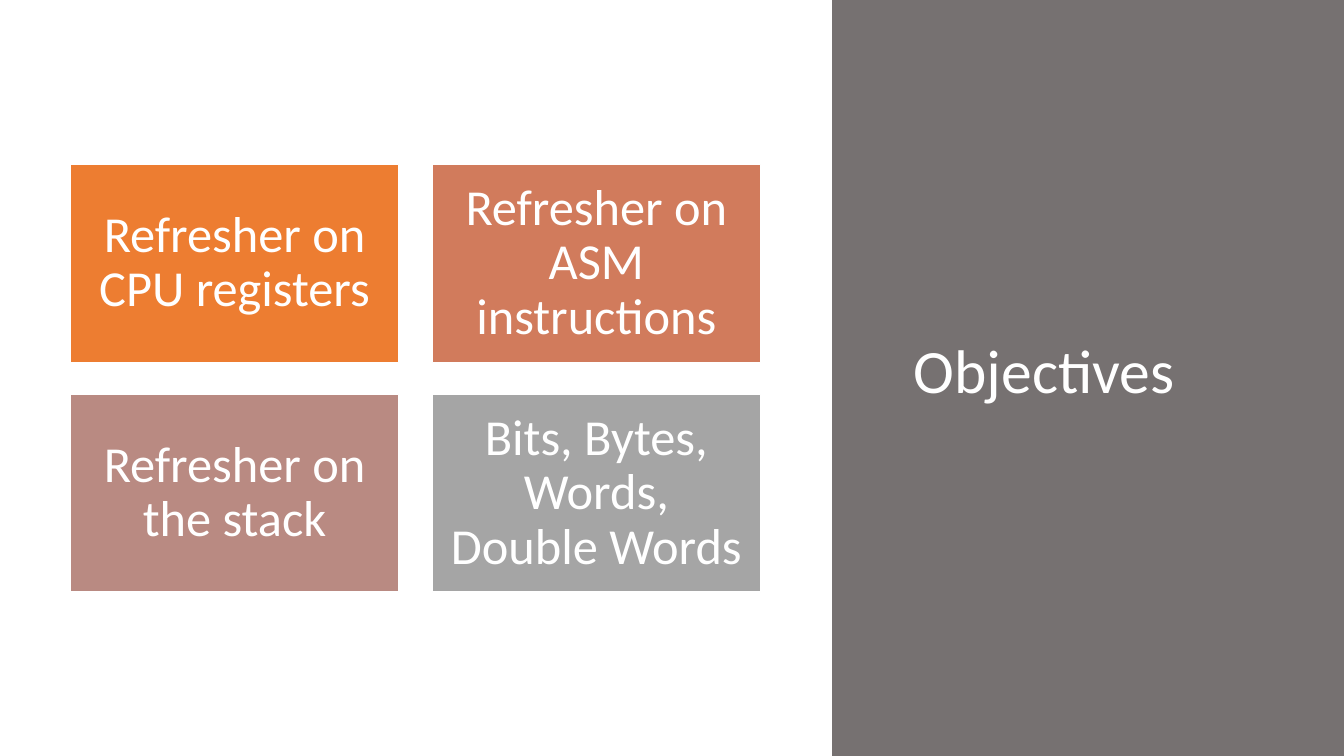
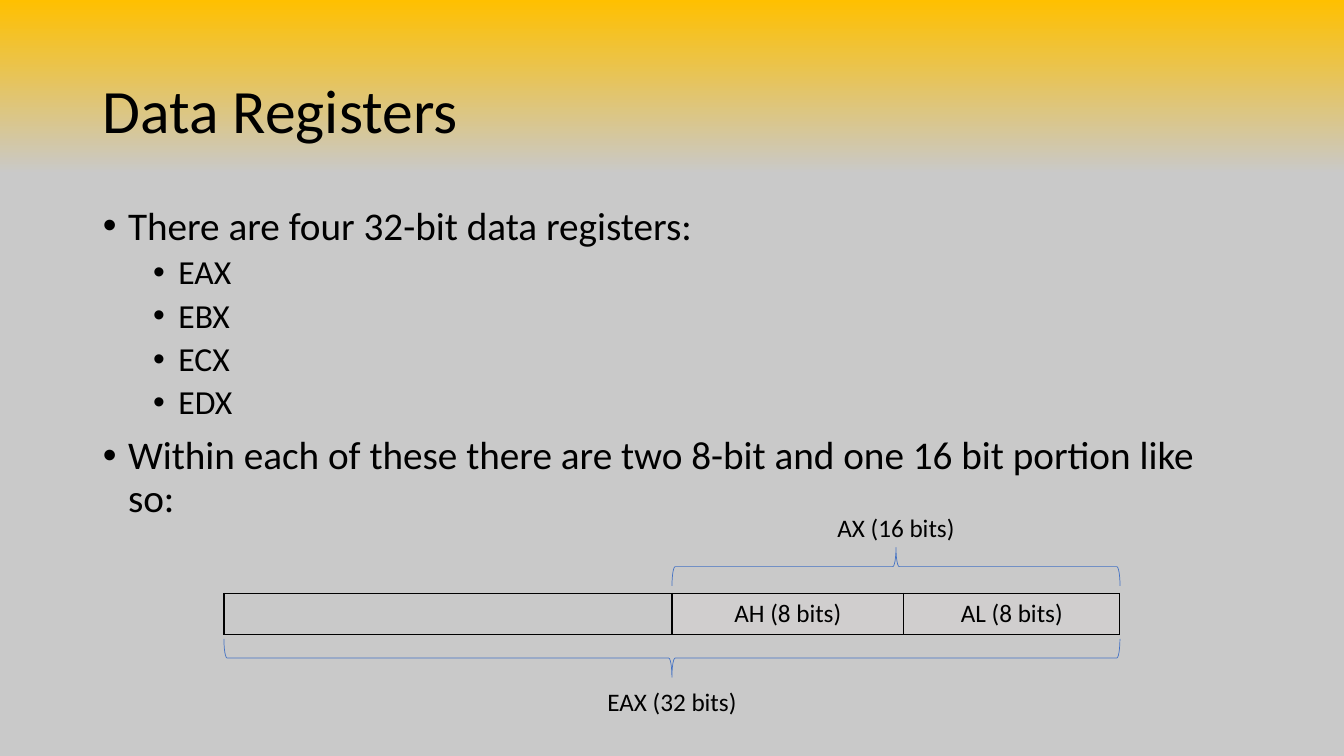
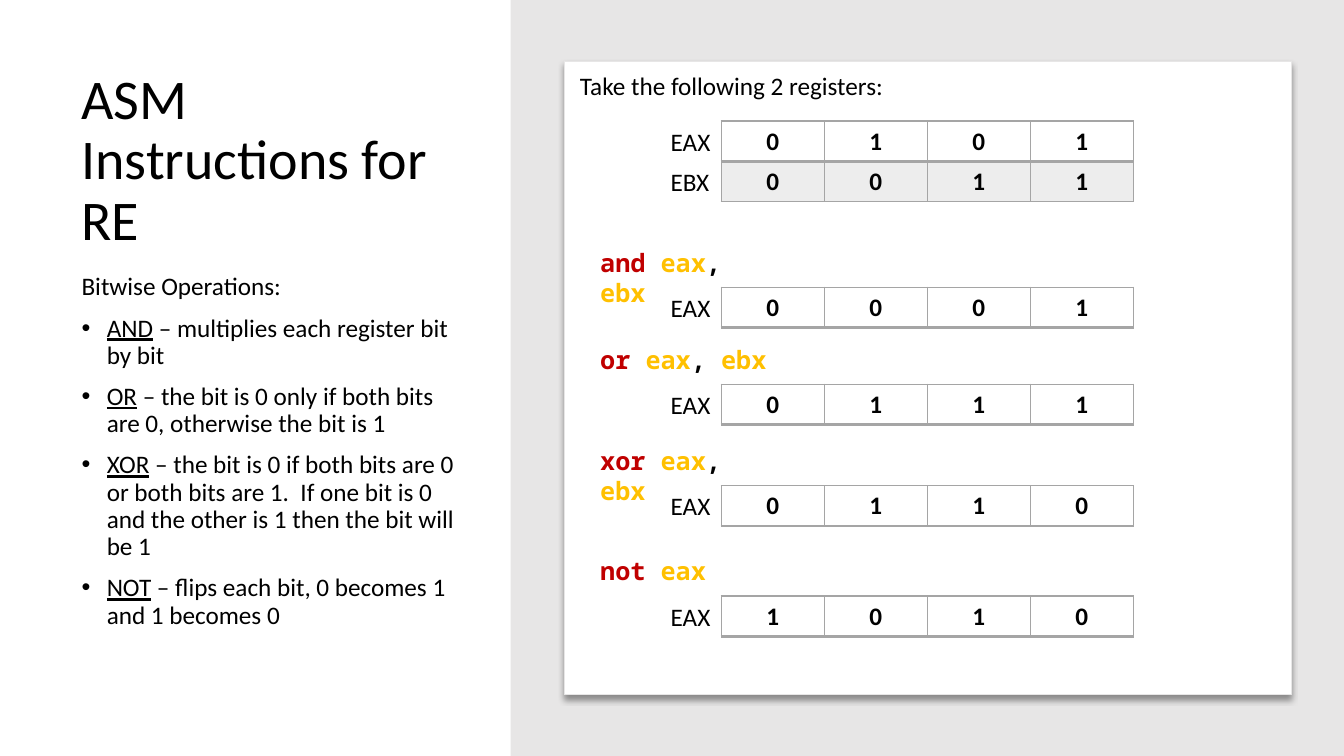
from dataclasses import dataclass
from typing import NamedTuple, Optional, Sequence, Union

import pptx
import pptx.dml.color
import pptx.enum.shapes
import pptx.enum.text
import pptx.oxml
import pptx.oxml.ns
import pptx.util
from lxml import etree

RGBColor = pptx.dml.color.RGBColor
PP_ALIGN = pptx.enum.text.PP_ALIGN
MSO_ANCHOR = pptx.enum.text.MSO_ANCHOR
MSO_SHAPE = pptx.enum.shapes.MSO_SHAPE
qn = pptx.oxml.ns.qn

BLACK = RGBColor(0x00, 0x00, 0x00)
WHITE = RGBColor(0xFF, 0xFF, 0xFF)
TAUPE = RGBColor(0x76, 0x71, 0x71)
ORANGE = RGBColor(0xED, 0x7D, 0x31)
TERRACOTTA = RGBColor(0xD1, 0x7B, 0x5C)
DUSTY_ROSE = RGBColor(0xB9, 0x8A, 0x82)
GRAY = RGBColor(0xA5, 0xA5, 0xA5)
PALE_GRAY = RGBColor(0xED, 0xED, 0xED)
BAND_GRAY = RGBColor(0xE7, 0xE6, 0xE6)
CELL_GRAY = RGBColor(0xD0, 0xCE, 0xCE)
BACK_GRAY = RGBColor(0xC9, 0xC9, 0xC9)
GOLD = RGBColor(0xFF, 0xC0, 0x00)
RED = RGBColor(0xC0, 0x00, 0x00)
BLUE = RGBColor(0x44, 0x72, 0xC4)

BODY_FONT = "Calibri"
CODE_FONT = "Noto Sans Mono"

# The slide is a grid of 12 columns by 12 rows; every Box is given in them.
SLIDE_WIDTH = pptx.util.Emu(12192000)
SLIDE_HEIGHT = pptx.util.Inches(7.5)
COLUMN = SLIDE_WIDTH / 12
ROW = SLIDE_HEIGHT / 12
LINE_ROWS = 0.64


class Box(NamedTuple):
    left: float
    top: float
    width: float
    height: float

    def emu(self) -> tuple[int, int, int, int]:
        return (round(self.left * COLUMN), round(self.top * ROW),
                round(self.width * COLUMN), round(self.height * ROW))


@dataclass(frozen=True)
class Run:
    text: str
    color: Optional[RGBColor] = None
    underline: bool = False


@dataclass(frozen=True)
class Paragraph:
    runs: Sequence[Run]
    size: float = 18
    indent: float = 0
    before: float = 0


class Card(NamedTuple):
    text: str
    color: RGBColor


class Operation(NamedTuple):
    mnemonic: str
    operands: Sequence[str]
    bits: str
    top: float


class Bracket(NamedTuple):
    label: str
    span: Box
    rotation: int
    label_top: float


Content = Union[str, Sequence[Paragraph]]


def write_text(frame, content: Content, *, size: float = 18,
               color: RGBColor = BLACK, font: str = BODY_FONT,
               bold: bool = False, align=PP_ALIGN.LEFT,
               spacing: float = 1.0) -> None:
    """Fill a text frame; a plain string becomes one paragraph."""
    if isinstance(content, str):
        content = [Paragraph([Run(content)], size)]
    for index, item in enumerate(content):
        line = frame.paragraphs[0] if index == 0 else frame.add_paragraph()
        line.alignment = align
        line.line_spacing = spacing
        line.space_before = pptx.util.Pt(item.before)
        if item.indent:
            add_bullet(line, item.indent)
        for part in item.runs:
            run = line.add_run()
            run.text = part.text
            run.font.name = font
            run.font.size = pptx.util.Pt(item.size)
            run.font.bold = bold
            run.font.underline = part.underline
            run.font.color.rgb = part.color or color


def add_bullet(line, indent: float) -> None:
    """Hang a bullet a quarter inch left of the indent (inches)."""
    properties = line._p.get_or_add_pPr()
    properties.set("marL", str(pptx.util.Inches(indent)))
    properties.set("indent", str(pptx.util.Inches(-0.25)))
    etree.SubElement(properties, qn("a:buFont")).set("typeface", "Arial")
    etree.SubElement(properties, qn("a:buChar")).set("char", "•")


def add_text(slide, box: Box, content: Content, *, anchor=MSO_ANCHOR.TOP,
             **text_format) -> None:
    frame = slide.shapes.add_textbox(*box.emu()).text_frame
    frame.word_wrap = True
    frame.vertical_anchor = anchor
    write_text(frame, content, **text_format)


def add_title(slide, box: Box, text: str, *, size: float = 44,
              color: RGBColor = BLACK) -> None:
    add_text(slide, box, text, size=size, color=color,
             anchor=MSO_ANCHOR.MIDDLE, spacing=0.9)


def add_block(slide, box: Box, fill: RGBColor,
              line: Optional[RGBColor] = None, line_width: float = 1):
    block = slide.shapes.add_shape(MSO_SHAPE.RECTANGLE, *box.emu())
    block.shadow.inherit = False
    block.fill.solid()
    block.fill.fore_color.rgb = fill
    if line is None:
        block.line.fill.background()
    else:
        block.line.color.rgb = line
        block.line.width = pptx.util.Pt(line_width)
    return block


def add_drop_shadow(block) -> None:
    effects = block._element.spPr.find(qn("a:effectLst"))
    shadow = etree.SubElement(
        effects, qn("a:outerShdw"), blurRad=str(pptx.util.Pt(4)),
        dist=str(pptx.util.Pt(3)), dir="5400000", algn="t", rotWithShape="0")
    tint = etree.SubElement(shadow, qn("a:srgbClr"), val=str(BLACK))
    etree.SubElement(tint, qn("a:alpha"), val="40000")


def set_borders(cell, color: RGBColor, bottom: float) -> None:
    """Draw 1 pt borders, with the bottom one at its own width."""
    properties = cell._tc.get_or_add_tcPr()
    for side, width in (("L", 1), ("R", 1), ("T", 1), ("B", bottom)):
        border = etree.SubElement(properties, qn(f"a:ln{side}"),
                                  w=str(pptx.util.Pt(width)))
        paint = etree.SubElement(border, qn("a:solidFill"))
        etree.SubElement(paint, qn("a:srgbClr"), val=str(color))


def add_grid(slide, left: float, top: float, widths: Sequence[float],
             row_height: float, rows: Sequence[Sequence[str]],
             fills: Sequence[Sequence[Optional[RGBColor]]], *,
             border: RGBColor, bottoms: Sequence[float],
             bold: bool = False) -> None:
    box = Box(left, top, sum(widths), row_height * len(rows))
    grid = slide.shapes.add_table(len(rows), len(widths), *box.emu()).table
    grid.first_row = grid.horz_banding = False
    for column, width in zip(grid.columns, widths):
        column.width = round(width * COLUMN)
    for r, texts in enumerate(rows):
        grid.rows[r].height = round(row_height * ROW)
        for c, text in enumerate(texts):
            cell = grid.cell(r, c)
            set_borders(cell, border, bottoms[r])
            if fills[r][c] is None:
                cell.fill.background()
            else:
                cell.fill.solid()
                cell.fill.fore_color.rgb = fills[r][c]
            if text:
                write_text(cell.text_frame, text, bold=bold,
                           align=PP_ALIGN.CENTER)


def add_bracket(slide, bracket: Bracket) -> None:
    """Turn a left brace so that it fills the span, and centre its label."""
    left, top, width, height = bracket.span.emu()
    brace = slide.shapes.add_shape(
        MSO_SHAPE.LEFT_BRACE, left + (width - height) // 2,
        top + (height - width) // 2, height, width)
    brace.rotation = bracket.rotation
    brace.shadow.inherit = False
    brace.fill.background()
    brace.line.color.rgb = BLUE
    brace.line.width = pptx.util.Pt(0.5)
    label_width = 1.68
    middle = bracket.span.left + bracket.span.width / 2
    add_text(slide, Box(middle - label_width / 2, bracket.label_top,
                        label_width, LINE_ROWS),
             bracket.label, align=PP_ALIGN.CENTER)


def build_objectives(slide) -> None:
    add_block(slide, Box(7.43, 0, 4.57, 12), TAUPE)
    add_title(slide, Box(8.07, 1.12, 3.61, 9.63), "Objectives", color=WHITE)
    cards = [
        Card("Refresher on CPU registers", ORANGE),
        Card("Refresher on ASM instructions", TERRACOTTA),
        Card("Refresher on the stack", DUSTY_ROSE),
        Card("Bits, Bytes, Words, Double Words", GRAY),
    ]
    for index, card in enumerate(cards):
        row, column = divmod(index, 2)
        box = Box(0.63 + 3.23 * column, 2.61 + 3.65 * row, 2.93, 3.14)
        frame = add_block(slide, box, card.color, WHITE).text_frame
        frame.word_wrap = True
        frame.vertical_anchor = MSO_ANCHOR.MIDDLE
        frame.margin_left = frame.margin_right = pptx.util.Inches(0.15)
        frame.margin_top = frame.margin_bottom = pptx.util.Inches(0.15)
        write_text(frame, card.text, size=36, color=WHITE,
                   align=PP_ALIGN.CENTER, spacing=0.9)


def build_data_registers(slide) -> None:
    backdrop = slide.background.fill
    backdrop.gradient()
    backdrop.gradient_angle = 270
    stops = ((0, GOLD), (0.23, BACK_GRAY))
    for stop, (position, color) in zip(backdrop.gradient_stops, stops):
        stop.position = position
        stop.color.rgb = color

    add_title(slide, Box(0.83, 0.64, 10.35, 2.32), "Data Registers")

    def point(text: str) -> Paragraph:
        return Paragraph([Run(text)], size=28, indent=0.25, before=10)

    registers = [Paragraph([Run(name)], size=24, indent=0.75, before=5)
                 for name in ("EAX", "EBX", "ECX", "EDX")]
    add_text(slide, Box(0.83, 3.2, 10.35, 7.62), [
        point("There are four 32-bit data registers:"),
        *registers,
        point("Within each of these there are two 8-bit and one 16 bit "
              "portion like so:"),
    ], spacing=0.9)

    add_grid(slide, 2, 9.42, (4, 2.07, 1.93), 0.65,
             [("", "AH (8 bits)", "AL (8 bits)")],
             [(None, CELL_GRAY, CELL_GRAY)], border=BLACK, bottoms=[1])
    for bracket in (
        Bracket("AX (16 bits)", Box(6, 8.69, 4, 0.61), 90, 8.05),
        Bracket("EAX (32 bits)", Box(2, 10.14, 8, 0.61), 270, 10.82),
    ):
        add_bracket(slide, bracket)


def add_registers(slide, top: float, registers: dict[str, str]) -> None:
    """Show each register's name beside its bits, one row per register."""
    fills = [(None,) * 4, (PALE_GRAY,) * 4]
    add_grid(slide, 6.44, top, (0.92,) * 4, LINE_ROWS,
             list(registers.values()), fills, border=GRAY,
             bottoms=(2, 1), bold=True)
    for row, name in enumerate(registers):
        add_text(slide, Box(5.9, top + row * LINE_ROWS, 0.88, LINE_ROWS),
                 name)


def build_instructions(slide) -> None:
    add_block(slide, Box(4.56, 0, 7.44, 12), BAND_GRAY)
    add_drop_shadow(add_block(slide, Box(5.04, 0.98, 6.49, 10.05), WHITE,
                              BAND_GRAY, 0.75))
    add_title(slide, Box(0.64, 1.1, 3.61, 2.93), "ASM Instructions for RE",
              size=40)

    rules = {
        "AND": "multiplies each register bit by bit",
        "OR": "the bit is 0 only if both bits are 0, otherwise the bit is 1",
        "XOR": "the bit is 0 if both bits are 0 or both bits are 1.  If one "
               "bit is 0 and the other is 1 then the bit will be 1",
        "NOT": "flips each bit, 0 becomes 1 and 1 becomes 0",
    }
    add_text(slide, Box(0.64, 4.27, 3.61, 6.61), [
        Paragraph([Run("Bitwise Operations:")], before=10),
        *(Paragraph([Run(name, underline=True), Run(f" – {rule}")],
                    indent=0.25, before=10) for name, rule in rules.items()),
    ], spacing=0.9)

    add_text(slide, Box(5.09, 1.04, 5.38, LINE_ROWS),
             "Take the following 2 registers:")
    add_registers(slide, 1.92, {"EAX": "0101", "EBX": "0011"})

    for operation in (
        Operation("and", ("eax", "ebx"), "0001", 4.56),
        Operation("or", ("eax", "ebx"), "0111", 6.1),
        Operation("xor", ("eax", "ebx"), "0110", 7.71),
        Operation("not", ("eax",), "1010", 9.46),
    ):
        code = [Run(f"{operation.mnemonic} ", RED)]
        for index, operand in enumerate(operation.operands):
            if index:
                code.append(Run(", "))
            code.append(Run(operand, GOLD))
        add_text(slide, Box(5.27, operation.top - 0.72, 1.76, LINE_ROWS),
                 [Paragraph(code)], font=CODE_FONT, bold=True)
        add_registers(slide, operation.top, {"EAX": operation.bits})


def main() -> None:
    deck = pptx.Presentation()
    deck.slide_width = SLIDE_WIDTH
    deck.slide_height = SLIDE_HEIGHT
    blank = deck.slide_layouts[6]
    for build in (build_objectives, build_data_registers, build_instructions):
        build(deck.slides.add_slide(blank))
    deck.save("out.pptx")


if __name__ == "__main__":
    main()
